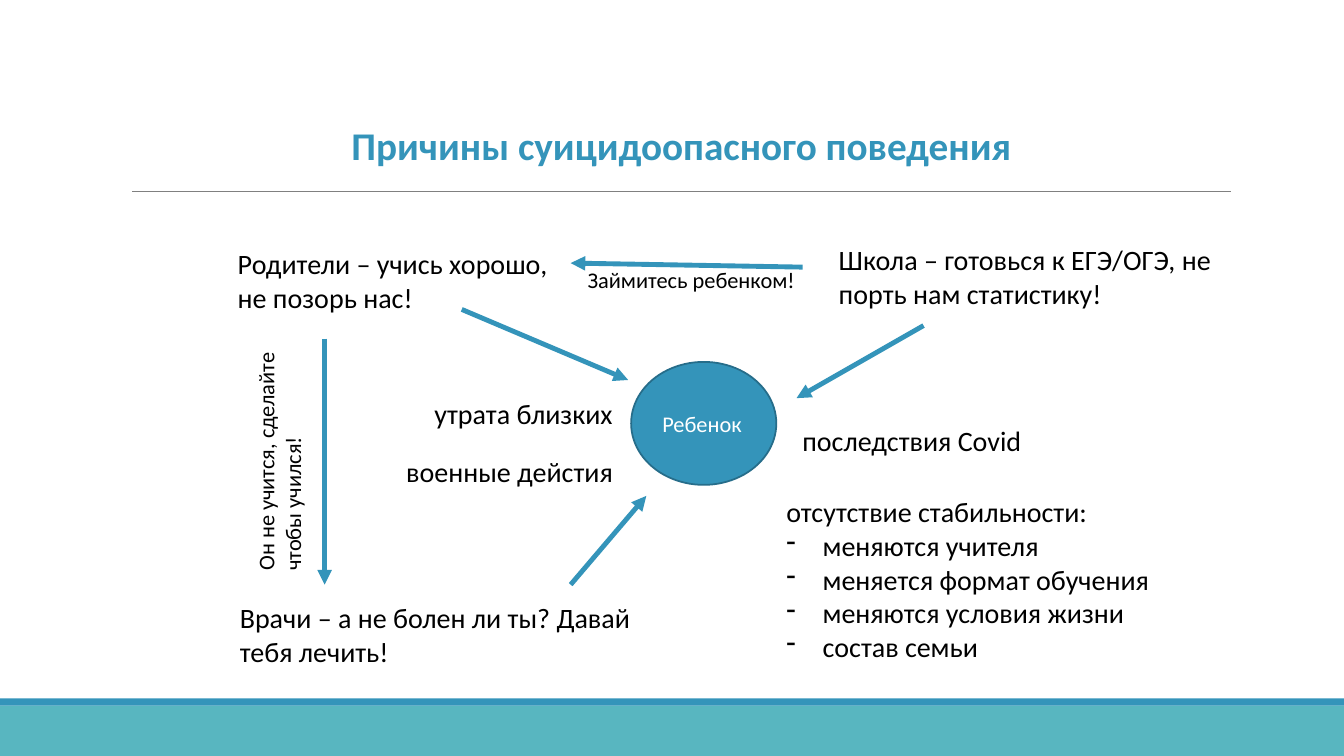
from typing import NamedTuple

from lxml.etree import SubElement
from pptx import Presentation
from pptx.dml.color import RGBColor
from pptx.enum.shapes import MSO_CONNECTOR, MSO_SHAPE
from pptx.enum.text import MSO_ANCHOR, MSO_AUTO_SIZE, PP_ALIGN
from pptx.oxml.ns import qn
from pptx.util import Inches, Pt

BLUE, TEAL, EDGE = "3494BA", "58B6C0", "266D8A"
GRAY, BLACK, WHITE = "808080", "000000", "FFFFFF"
INDENT = Inches(0.36)


class Label(NamedTuple):
    text: str
    box: tuple
    size: int = 20
    wrap: bool = True
    turned: bool = False


class Arrow(NamedTuple):
    start: tuple
    end: tuple


LABELS = [
    Label("Родители – учись хорошо, не позорь нас!", (2.26, 2.4, 3.57, 0.77)),
    Label("Школа – готовься к ЕГЭ/ОГЭ, не порть нам статистику!", (8.22, 2.36, 4.01, 0.77)),
    Label("Врачи – а не болен ли ты? Давай тебя лечить!", (2.28, 5.91, 4.11, 0.77)),
    Label("последствия Covid", (7.86, 4.15, 2.44, 0.44), wrap=False),
    Label("военные дейстия", (3.93, 4.46, 2.3, 0.44), wrap=False),
    Label("утрата близких", (4.21, 3.88, 2.02, 0.44), wrap=False),
    Label("Он не учится, сделайте чтобы учился!", (2.45, 3.38, 0.74, 2.38), 16, turned=True),
    Label("Займитесь ребенком!", (5.73, 2.59, 2.49, 0.37), 16),
]
ARROWS = [
    Arrow((4.58, 3.07), (6.23, 3.77)),
    Arrow((9.16, 3.23), (7.9, 3.95)),
    Arrow((5.66, 5.8), (6.41, 4.92)),
    Arrow((3.22, 3.36), (3.22, 5.8)),
    Arrow((7.96, 2.65), (5.66, 2.61)),
]
CHANGES = ["меняются учителя", "меняется формат обучения",
           "меняются условия жизни", "состав семьи"]


def color(code: str) -> RGBColor:
    return RGBColor.from_string(code)


def write(para, text: str, size: int = 20, ink: str = BLACK,
          bold: bool = False, align=PP_ALIGN.LEFT) -> None:
    para.alignment = align
    run = para.add_run()
    run.text = text
    font = run.font
    font.name, font.size, font.bold = "Calibri", Pt(size), bold
    font.color.rgb = color(ink)


def add_label(slide, label: Label):
    frame = slide.shapes.add_textbox(*map(Inches, label.box)).text_frame
    frame.word_wrap = label.wrap
    frame.auto_size = MSO_AUTO_SIZE.SHAPE_TO_FIT_TEXT
    if label.turned:
        frame._txBody.bodyPr.set("vert", "vert270")
    write(frame.paragraphs[0], label.text, label.size)
    return frame


def add_dash(para) -> None:
    """Give the paragraph a hanging dash bullet."""
    props = para._p.get_or_add_pPr()
    props.set("marL", str(INDENT))
    props.set("indent", str(-INDENT))
    SubElement(props, qn("a:buChar"), char="-")


def add_shape(slide, kind, box: tuple, fill: str, edge: str = ""):
    shape = slide.shapes.add_shape(kind, *map(Inches, box))
    shape.shadow.inherit = False
    shape.fill.solid()
    shape.fill.fore_color.rgb = color(fill)
    if edge:
        shape.line.color.rgb = color(edge)
        shape.line.width = Pt(1.25)
    else:
        shape.line.fill.background()
    return shape


def add_line(slide, start: tuple, end: tuple, ink: str, width: float,
             head: bool = False) -> None:
    link = slide.shapes.add_connector(MSO_CONNECTOR.STRAIGHT, *map(Inches, start + end))
    link.line.color.rgb = color(ink)
    link.line.width = Pt(width)
    if head:
        SubElement(link.line._get_or_add_ln(), qn("a:tailEnd"), type="triangle")
    SubElement(link._element.spPr, qn("a:effectLst"))


def add_title(slide, text: str) -> None:
    title = slide.shapes.title
    title.left, title.top, title.width, title.height = map(Inches, (3.34, 1.15, 6.83, 0.57))
    frame = title.text_frame
    frame.word_wrap = False
    frame.auto_size = MSO_AUTO_SIZE.SHAPE_TO_FIT_TEXT
    write(frame.paragraphs[0], text, 28, BLUE, True, PP_ALIGN.CENTER)


def main() -> None:
    deck = Presentation()
    deck.slide_width, deck.slide_height = Inches(13.33), Inches(7.5)
    slide = deck.slides.add_slide(deck.slide_layouts[5])

    add_shape(slide, MSO_SHAPE.RECTANGLE, (0, 7, 13.33, 0.5), TEAL)
    add_shape(slide, MSO_SHAPE.RECTANGLE, (0, 6.93, 13.33, 0.07), BLUE)
    add_line(slide, (1.31, 1.9), (12.21, 1.9), GRAY, 0.5)
    add_title(slide, "Причины суицидоопасного поведения")

    child = add_shape(slide, MSO_SHAPE.OVAL, (6.26, 3.59, 1.44, 1.22), BLUE, EDGE)
    child.text_frame.vertical_anchor = MSO_ANCHOR.MIDDLE
    write(child.text_frame.paragraphs[0], "Ребенок", 16, WHITE)

    for label in LABELS:
        add_label(slide, label)
    for arrow in ARROWS:
        add_line(slide, arrow.start, arrow.end, BLUE, 3.5, head=True)

    frame = add_label(slide, Label("отсутствие стабильности:", (7.7, 4.86, 4.32, 1.78)))
    for change in CHANGES:
        para = frame.add_paragraph()
        write(para, change)
        add_dash(para)

    deck.save("out.pptx")


if __name__ == "__main__":
    main()
